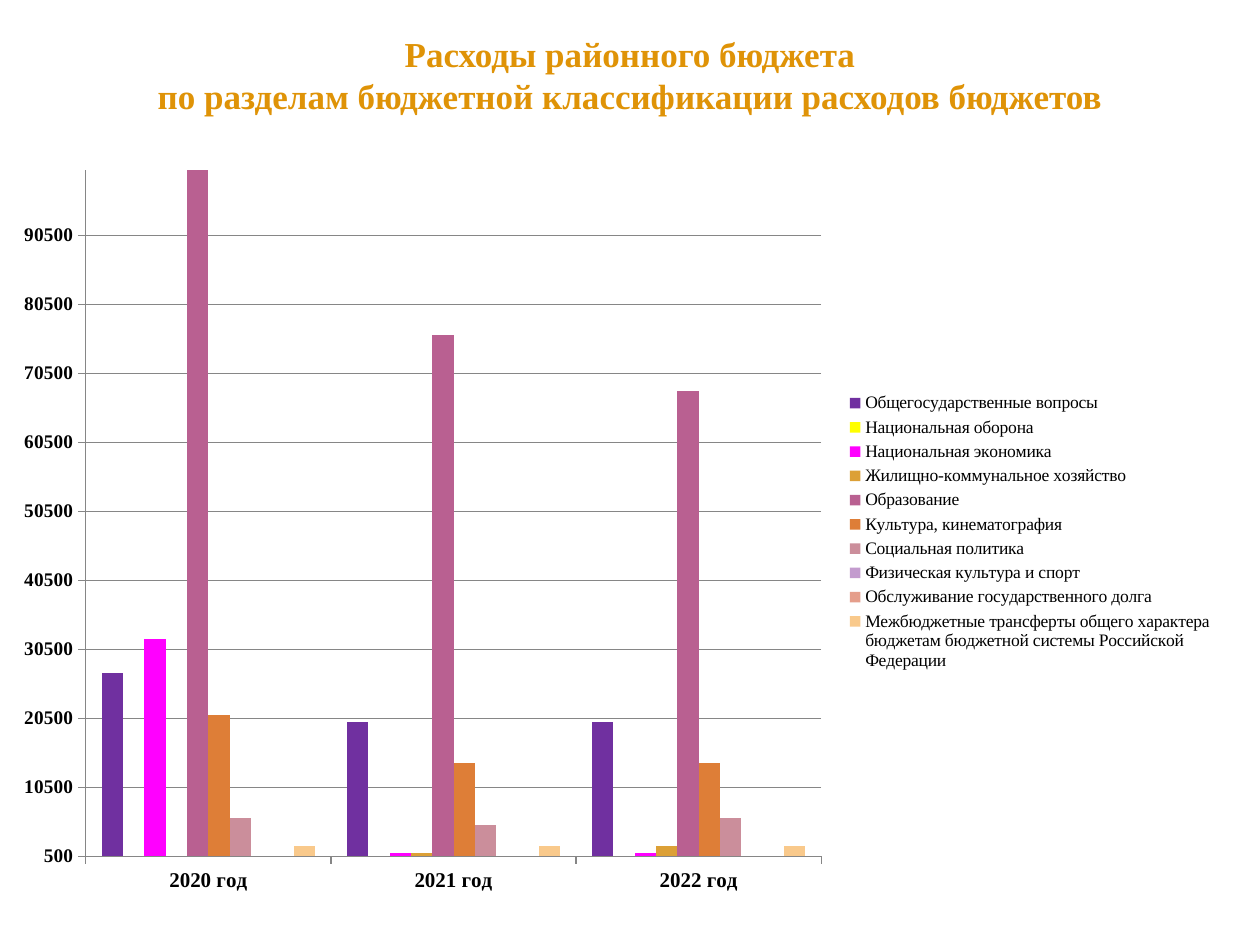
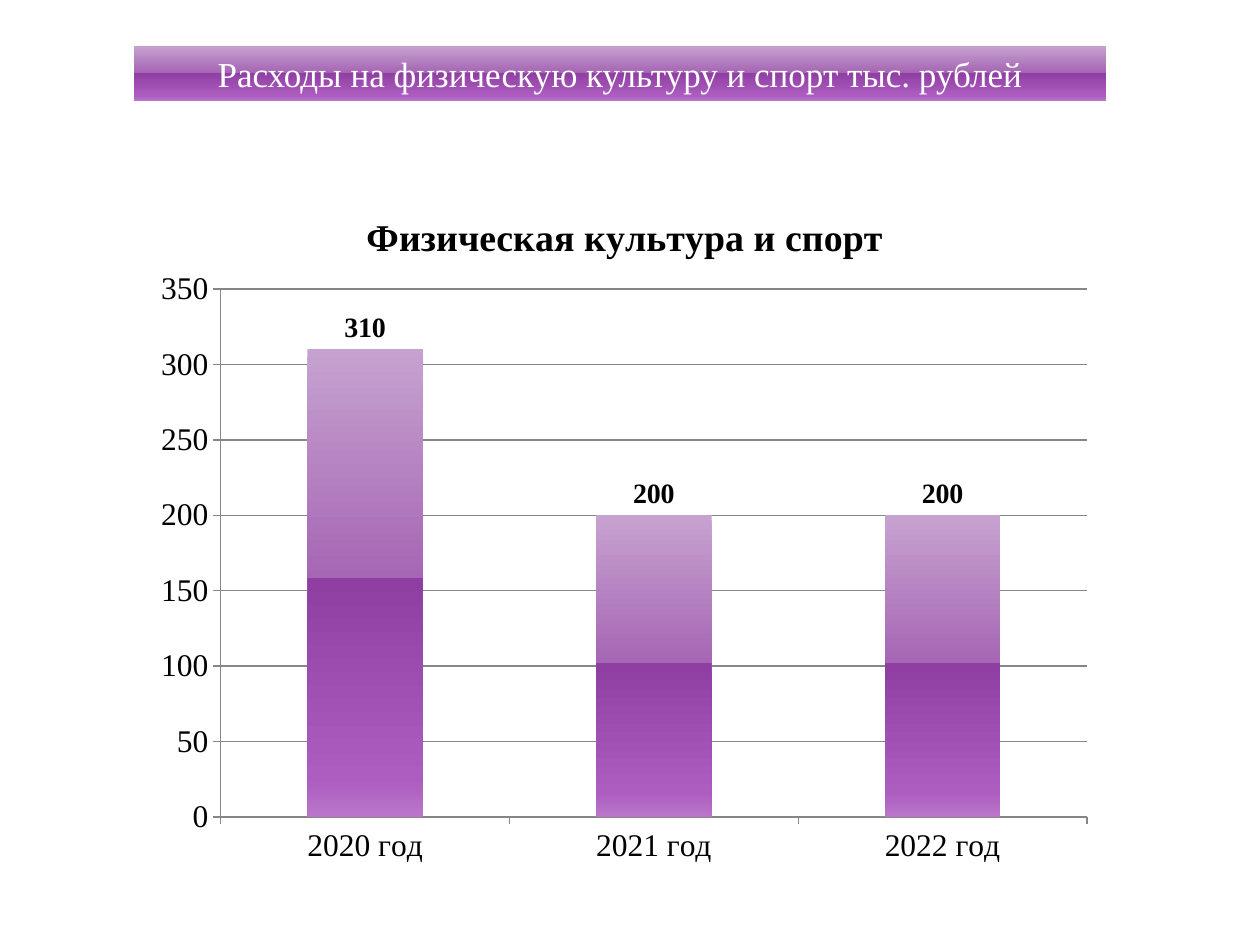
from dataclasses import dataclass

from lxml import etree
from pptx import Presentation
from pptx.chart.data import CategoryChartData
from pptx.dml.color import RGBColor
from pptx.enum.chart import XL_CHART_TYPE, XL_LABEL_POSITION, XL_LEGEND_POSITION, XL_TICK_MARK
from pptx.enum.shapes import MSO_SHAPE
from pptx.enum.text import MSO_ANCHOR, PP_ALIGN
from pptx.oxml.ns import qn
from pptx.util import Cm, Pt

COLUMNS = XL_CHART_TYPE.COLUMN_CLUSTERED
LABEL_OUTSIDE = XL_LABEL_POSITION.OUTSIDE_END
LEGEND_RIGHT = XL_LEGEND_POSITION.RIGHT
TICK_OUTSIDE = XL_TICK_MARK.OUTSIDE
RECTANGLE = MSO_SHAPE.RECTANGLE
MIDDLE = MSO_ANCHOR.MIDDLE
CENTER = PP_ALIGN.CENTER

YEARS = ["2020 год", "2021 год", "2022 год"]

BUDGET_TITLE = [
    "Расходы районного бюджета",
    "по разделам бюджетной классификации расходов бюджетов",
]
BUDGET_SECTIONS = [
    ("Общегосударственные вопросы", (27000, 20000, 20000), "7030A0"),
    ("Национальная оборона", (0, 0, 0), "FFFF00"),
    ("Национальная экономика", (32000, 1000, 1000), "FF00FF"),
    ("Жилищно-коммунальное хозяйство", (0, 1000, 2000), "DCA036"),
    ("Образование", (117000, 76000, 68000), "B96091"),
    ("Культура, кинематография", (21000, 14000, 14000), "DE7E37"),
    ("Социальная политика", (6000, 5000, 6000), "CB8E9B"),
    ("Физическая культура и спорт", (0, 0, 0), "C39BCE"),
    ("Обслуживание государственного долга", (0, 0, 0), "E59E8B"),
    ("Межбюджетные трансферты общего характера бюджетам "
     "бюджетной системы Российской Федерации", (2000, 2000, 2000), "F9C98B"),
]

SPORT_TITLE = ["Расходы на физическую культуру и спорт тыс. рублей"]
SPORT_SERIES = [("Физическая культура и спорт", (310, 200, 200), None)]


@dataclass(frozen=True)
class Theme:
    font: str = "Times New Roman"
    gold: str = "DF9307"
    white: str = "FFFFFF"
    black: str = "000000"
    grid: str = "868686"
    purple_gradient: tuple = ((0, "C6A2D0"), (49, "A666B4"), (49, "8F3EA1"),
                              (92, "AD5DBF"), (100, "BA76CA"))
    title_size: float = 20
    chart_title_size: float = 21.6
    chart_size: float = 18
    label_size: float = 16
    category_size: float = 12
    value_size: float = 11
    legend_size: float = 10


THEME = Theme()


def style_font(font, size, color=THEME.black, bold=False):
    font.name = THEME.font
    font.size = Pt(size)
    font.bold = bold
    font.color.rgb = RGBColor.from_string(color)


def fill_purple(fill, element):
    """Apply the vertical theme gradient to a fill that belongs to element."""
    fill.gradient()
    fill.gradient_angle = 270
    stops = next(element.iter(qn("a:gsLst")))
    for stop in list(stops):
        stops.remove(stop)
    for percent, color in THEME.purple_gradient:
        stop = etree.SubElement(stops, qn("a:gs"), pos=str(percent * 1000))
        etree.SubElement(stop, qn("a:srgbClr"), val=color)


def write_title(shape, lines, color, bold):
    frame = shape.text_frame
    frame.word_wrap = True
    frame.vertical_anchor = MIDDLE
    for number, line in enumerate(lines):
        paragraph = frame.add_paragraph() if number else frame.paragraphs[0]
        paragraph.alignment = CENTER
        run = paragraph.add_run()
        run.text = line
        style_font(run.font, THEME.title_size, color, bold)


def place_part(parent, target, **fractions):
    """Pin a chart part to fractions (x, y, w, h) of the chart area."""
    for old in parent.findall(qn("c:layout")):
        parent.remove(old)
    layout = etree.Element(qn("c:layout"))
    manual = etree.SubElement(layout, qn("c:manualLayout"))
    if target:
        etree.SubElement(manual, qn("c:layoutTarget"), val=target)
    for axis in "xy":
        etree.SubElement(manual, qn(f"c:{axis}Mode"), val="edge")
    for name, value in fractions.items():
        etree.SubElement(manual, qn(f"c:{name}"), val=str(value))
    parent.insert(0 if parent.find(qn("c:legendPos")) is None else 1, layout)


def style_axis(axis, size, bold):
    axis.major_tick_mark = TICK_OUTSIDE
    axis.format.line.color.rgb = RGBColor.from_string(THEME.grid)
    axis.format.line.width = Pt(0.75)
    style_font(axis.tick_labels.font, size, bold=bold)


def add_column_chart(slide, position, series_rows, axis_sizes, bold_axes):
    data = CategoryChartData()
    data.categories = YEARS
    for name, values, _ in series_rows:
        data.add_series(name, values)
    chart = slide.shapes.add_chart(COLUMNS, *position, data).chart
    style_font(chart.font, THEME.chart_size)
    chart.has_title = False
    chart.has_legend = False
    plot = chart.plots[0]
    plot.gap_width = 150
    plot.overlap = 0
    plot.vary_by_categories = False
    for series, (_, _, color) in zip(plot.series, series_rows):
        series.invert_if_negative = False
        if color:
            series.format.fill.solid()
            series.format.fill.fore_color.rgb = RGBColor.from_string(color)
        else:
            fill_purple(series.format.fill, series._element)
    for axis, size in zip((chart.category_axis, chart.value_axis), axis_sizes):
        style_axis(axis, size, bold_axes)
    chart.value_axis.has_major_gridlines = True
    grid_line = chart.value_axis.major_gridlines.format.line
    grid_line.color.rgb = RGBColor.from_string(THEME.grid)
    grid_line.width = Pt(0.75)
    return chart


def build_budget_slide(slide):
    title = slide.shapes.add_textbox(Cm(1.3), Cm(0.53), Cm(22.8), Cm(1.96))
    write_title(title, BUDGET_TITLE, THEME.gold, bold=True)

    position = Cm(0), Cm(3.12), Cm(24.71), Cm(15.21)
    sizes = THEME.category_size, THEME.value_size
    chart = add_column_chart(slide, position, BUDGET_SECTIONS, sizes, bold_axes=True)
    chart.value_axis.minimum_scale = 500
    chart.value_axis.maximum_scale = 100000
    chart.value_axis.major_unit = 10000
    chart.has_legend = True
    chart.legend.position = LEGEND_RIGHT
    chart.legend.include_in_layout = False
    style_font(chart.legend.font, THEME.legend_size)
    place_part(chart._chartSpace.chart.plotArea, "inner", x=0.07, y=0.02, w=0.6, h=0.91)
    place_part(chart.legend._element, None, x=0.69, y=0.31, w=0.3, h=0.38)


def build_sport_slide(slide):
    banner = slide.shapes.add_shape(RECTANGLE, Cm(2.7), Cm(0.92), Cm(19.6), Cm(1.11))
    banner.shadow.inherit = False
    banner.line.fill.background()
    fill_purple(banner.fill, banner._element)
    write_title(banner, SPORT_TITLE, THEME.white, bold=False)

    position = Cm(2.9), Cm(3.73), Cm(19.4), Cm(14)
    sizes = THEME.chart_size, THEME.chart_size
    chart = add_column_chart(slide, position, SPORT_SERIES, sizes, bold_axes=False)
    chart.value_axis.minimum_scale = 0
    chart.value_axis.maximum_scale = 350
    chart.value_axis.major_unit = 50
    chart.has_title = True
    run = chart.chart_title.text_frame.paragraphs[0].add_run()
    run.text = SPORT_SERIES[0][0]
    style_font(run.font, THEME.chart_title_size, bold=True)
    chart.chart_title.include_in_layout = False
    labels = chart.plots[0].series[0].data_labels
    labels.show_value = True
    labels.position = LABEL_OUTSIDE
    style_font(labels.font, THEME.label_size, bold=True)
    place_part(chart._chartSpace.chart.plotArea, "inner", x=0.08, y=0.15, w=0.9, h=0.76)


def main():
    presentation = Presentation()
    presentation.slide_width = Cm(25.4)
    presentation.slide_height = Cm(19.05)
    blank_layout = presentation.slide_layouts[6]
    for build in (build_budget_slide, build_sport_slide):
        build(presentation.slides.add_slide(blank_layout))
    presentation.save("out.pptx")


if __name__ == "__main__":
    main()
